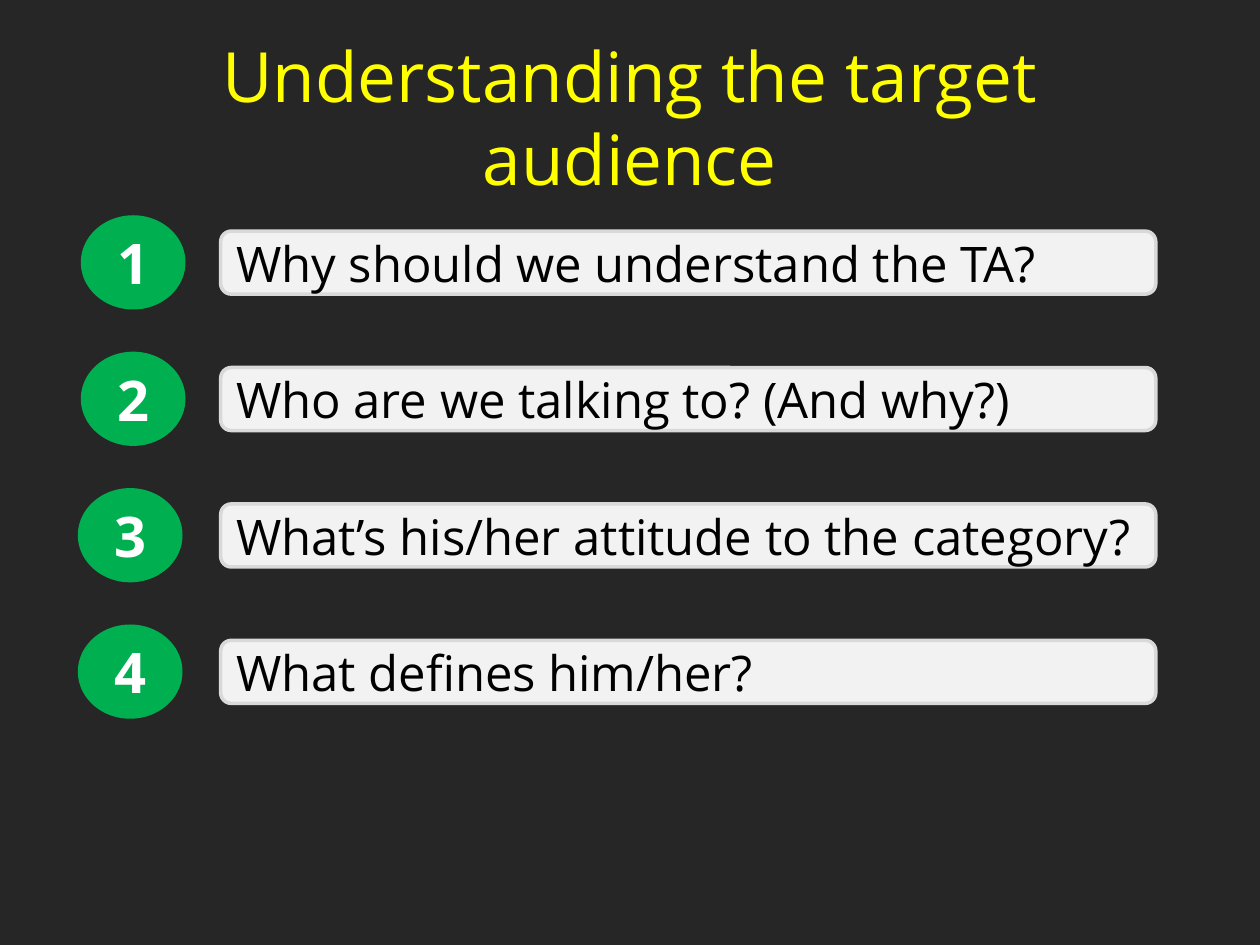
from pptx import Presentation
from pptx.dml.color import RGBColor
from pptx.enum.shapes import MSO_SHAPE as Shape
from pptx.enum.text import MSO_ANCHOR as Anchor, PP_ALIGN as Align
from pptx.util import Cm, Pt

COLORS = {
    "background": "262626",
    "title": "FFFF00",
    "badge": "00B050",
    "number": "FFFFFF",
    "bar": "F2F2F2",
    "border": "D9D9D9",
    "question": "000000",
}
QUESTIONS = [
    "Why should we understand the TA?",
    "Who are we talking to? (And why?)",
    "What’s his/her attitude to the category?",
    "What defines him/her?",
]
BADGE_LEFTS = [1.63, 1.63, 1.57, 1.57]
ROW_PITCH = 2.75


def color(name):
    return RGBColor.from_string(COLORS[name])


def write(sp, text, *, font, size, fill, bold=False, align=Align.LEFT):
    tf = sp.text_frame
    tf.word_wrap = True
    tf.vertical_anchor = Anchor.MIDDLE
    p = tf.paragraphs[0]
    p.alignment = align
    r = p.add_run()
    r.text = text
    r.font.name = font
    r.font.size = Pt(size)
    r.font.bold = bold
    r.font.color.rgb = color(fill)


class Deck:
    font = "Open Sans"

    def __init__(self):
        self.prs = Presentation()
        self.prs.slide_width = Cm(25.4)
        self.prs.slide_height = Cm(19.05)
        self.s = None

    def slide(self):
        self.s = self.prs.slides.add_slide(self.prs.slide_layouts[6])
        bg = self.s.background.fill
        bg.solid()
        bg.fore_color.rgb = color("background")

    def title(self, text):
        sp = self.s.shapes.add_textbox(Cm(1.27), Cm(0.76), Cm(22.86), Cm(3.18))
        write(sp, text, font=self.font, size=39.6, fill="title", align=Align.CENTER)

    def shape(self, kind, box, fill):
        sp = self.s.shapes.add_shape(kind, *map(Cm, box))
        sp.shadow.inherit = False
        sp.fill.solid()
        sp.fill.fore_color.rgb = color(fill)
        return sp

    def badge(self, left, top, number):
        sp = self.shape(Shape.OVAL, (left, top, 2.11, 1.9), "badge")
        sp.line.fill.background()
        write(sp, str(number), font=self.font, size=32, fill="number",
              bold=True, align=Align.CENTER)

    def bar(self, top, text):
        sp = self.shape(Shape.ROUNDED_RECTANGLE, (4.45, top, 18.85, 1.27), "bar")
        sp.line.color.rgb = color("border")
        sp.line.width = Pt(2)
        write(sp, text, font=self.font, size=28, fill="question")


def main():
    deck = Deck()
    deck.slide()
    deck.title("Understanding the target audience")
    for i, (left, question) in enumerate(zip(BADGE_LEFTS, QUESTIONS)):
        offset = i * ROW_PITCH
        deck.badge(left, 4.34 + offset, i + 1)
        deck.bar(4.66 + offset, question)
    deck.prs.save("out.pptx")


if __name__ == "__main__":
    main()
